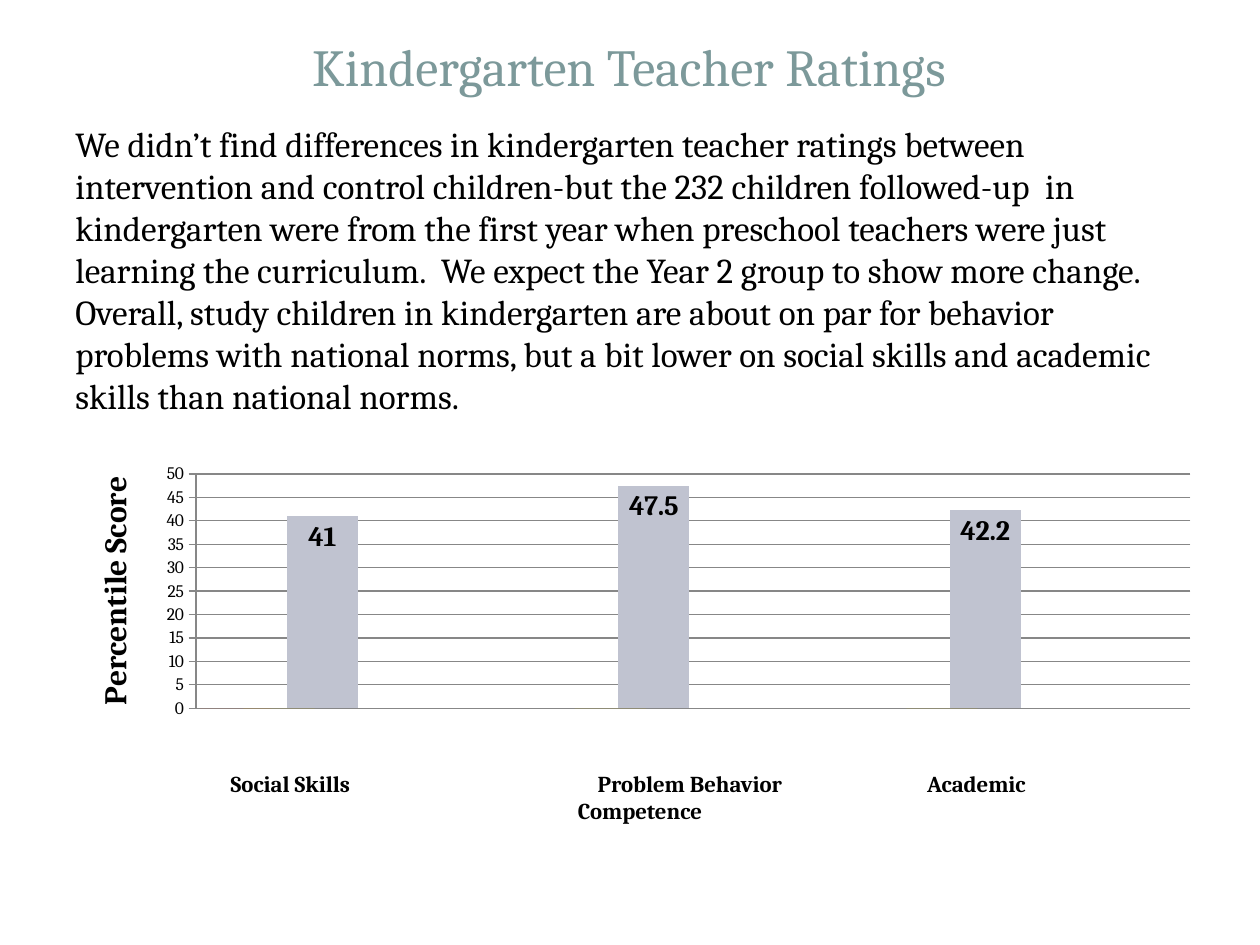
from dataclasses import dataclass

import pptx
import pptx.chart.data
import pptx.dml.color
import pptx.enum.chart
import pptx.enum.text
import pptx.oxml
import pptx.util
from pptx.util import Cm


@dataclass(frozen=True)
class Theme:
    font: str = "Cambria"
    title_color: str = "7C999A"
    text_color: str = "000000"
    grid_color: str = "878787"
    series_colors: tuple = ("D16349", "CCB400", "C0C3D0")
    title_size: float = 29.7
    body_size: float = 20
    axis_title_size: float = 18
    value_label_size: float = 16
    category_size: float = 13
    tick_size: float = 10


THEME = Theme()


def rgb(color):
    return pptx.dml.color.RGBColor.from_string(color)


def style_font(font, size, color=THEME.text_color, bold=False):
    font.name = THEME.font
    font.size = pptx.util.Pt(size)
    font.bold = bold
    font.color.rgb = rgb(color)


def add_title(slide, text):
    title = slide.shapes.title
    title.left, title.top, title.width, title.height = Cm(0.84), Cm(0.64), Cm(23.7), Cm(1.45)
    frame = title.text_frame
    frame.text = text
    frame.vertical_anchor = pptx.enum.text.MSO_ANCHOR.BOTTOM
    paragraph = frame.paragraphs[0]
    paragraph.alignment = pptx.enum.text.PP_ALIGN.CENTER
    style_font(paragraph.font, THEME.title_size, THEME.title_color)


def add_text_frame(slide, left, top, width, height):
    frame = slide.shapes.add_textbox(left, top, width, height).text_frame
    frame.word_wrap = True
    return frame


def add_body(slide, text):
    frame = add_text_frame(slide, Cm(1.27), Cm(2.34), Cm(22.86), Cm(6.4))
    frame.text = text
    paragraph = frame.paragraphs[0]
    paragraph.line_spacing = pptx.util.Pt(24)
    style_font(paragraph.font, THEME.body_size)


def set_plot_area(chart, x, y, width, height):
    """Fix the inner plot area, in fractions of the chart."""
    layout = pptx.oxml.parse_xml(
        '<c:layout xmlns:c="http://schemas.openxmlformats.org/drawingml/2006/chart">'
        '<c:manualLayout><c:layoutTarget val="inner"/>'
        '<c:xMode val="edge"/><c:yMode val="edge"/>'
        f'<c:x val="{x}"/><c:y val="{y}"/><c:w val="{width}"/><c:h val="{height}"/>'
        "</c:manualLayout></c:layout>"
    )
    plot_area = chart.plots[0]._element.getparent()
    for old_layout in plot_area.findall(layout.tag):
        plot_area.remove(old_layout)
    plot_area.insert(0, layout)


def format_value_axis(axis, title):
    axis.minimum_scale, axis.maximum_scale, axis.major_unit = 0, 50, 5
    axis.major_tick_mark = pptx.enum.chart.XL_TICK_MARK.OUTSIDE
    axis.has_major_gridlines = True
    for line in (axis.format.line, axis.major_gridlines.format.line):
        line.color.rgb = rgb(THEME.grid_color)
        line.width = pptx.util.Pt(0.75)
    style_font(axis.tick_labels.font, THEME.tick_size)
    frame = axis.axis_title.text_frame
    frame.text = title
    style_font(frame.paragraphs[0].font, THEME.axis_title_size, bold=True)


def add_value_labels(series):
    for index, value in enumerate(series.values):
        if value:
            label = series.points[index].data_label
            style_font(label.font, THEME.value_label_size, bold=True)
            label.position = pptx.enum.chart.XL_LABEL_POSITION.INSIDE_END


def add_ratings_chart(slide):
    data = pptx.chart.data.CategoryChartData()
    data.categories = ["1", "2", "3", "4", "5", "6"]
    data.add_series("Series 1", [0, None, None, None, None, None])
    data.add_series("Series 2", [0, None, 0, None, 0, None])
    data.add_series("Series 3", [41, None, 47.5, None, 42.2, None])
    chart = slide.shapes.add_chart(
        pptx.enum.chart.XL_CHART_TYPE.COLUMN_CLUSTERED,
        Cm(1.42), Cm(9.25), Cm(23.04), Cm(7.62), data,
    ).chart
    chart.has_legend = False
    chart.has_title = False
    style_font(chart.font, THEME.tick_size)

    plot = chart.plots[0]
    plot.vary_by_categories = False
    plot.gap_width, plot.overlap = 11, 39
    for series, color in zip(plot.series, THEME.series_colors):
        series.format.fill.solid()
        series.format.fill.fore_color.rgb = rgb(color)
    add_value_labels(plot.series[2])

    chart.category_axis.visible = False
    format_value_axis(chart.value_axis, "Percentile Score")
    set_plot_area(chart, 0.11, 0.04, 0.87, 0.62)


def add_tab_stops(paragraph, positions):
    properties = paragraph._p.get_or_add_pPr()
    tab_list = properties.makeelement(pptx.oxml.ns.qn("a:tabLst"), {})
    for position in positions:
        tab = tab_list.makeelement(pptx.oxml.ns.qn("a:tab"), {"pos": str(position), "algn": "l"})
        tab_list.append(tab)
    properties.append(tab_list)


def add_category_labels(slide):
    frame = add_text_frame(slide, Cm(4.65), Cm(15.4), Cm(16.5), Cm(1.4))
    frame.margin_left = frame.margin_right = 0
    frame.text = "Social Skills\tProblem Behavior\tAcademic\nCompetence"
    names, last_line = frame.paragraphs
    add_tab_stops(names, [Cm(7.4), Cm(14.04)])
    names.alignment = pptx.enum.text.PP_ALIGN.LEFT
    last_line.alignment = pptx.enum.text.PP_ALIGN.CENTER
    for paragraph in frame.paragraphs:
        paragraph.line_spacing = pptx.util.Pt(15.4)
        style_font(paragraph.font, THEME.category_size, bold=True)


def main():
    presentation = pptx.Presentation()
    presentation.slide_width, presentation.slide_height = Cm(25.4), Cm(19.05)
    slide = presentation.slides.add_slide(presentation.slide_layouts[5])

    # Heading and findings
    add_title(slide, "Kindergarten Teacher Ratings")
    add_body(
        slide,
        "We didn’t find differences in kindergarten teacher ratings between intervention "
        "and control children-but the 232 children followed-up  in kindergarten were from "
        "the first year when preschool teachers were just learning the curriculum.  We "
        "expect the Year 2 group to show more change. Overall, study children in "
        "kindergarten are about on par for behavior problems with national norms, but a "
        "bit lower on social skills and academic skills than national norms.",
    )

    # Ratings chart with its category names
    add_ratings_chart(slide)
    add_category_labels(slide)

    presentation.save("out.pptx")


if __name__ == "__main__":
    main()
